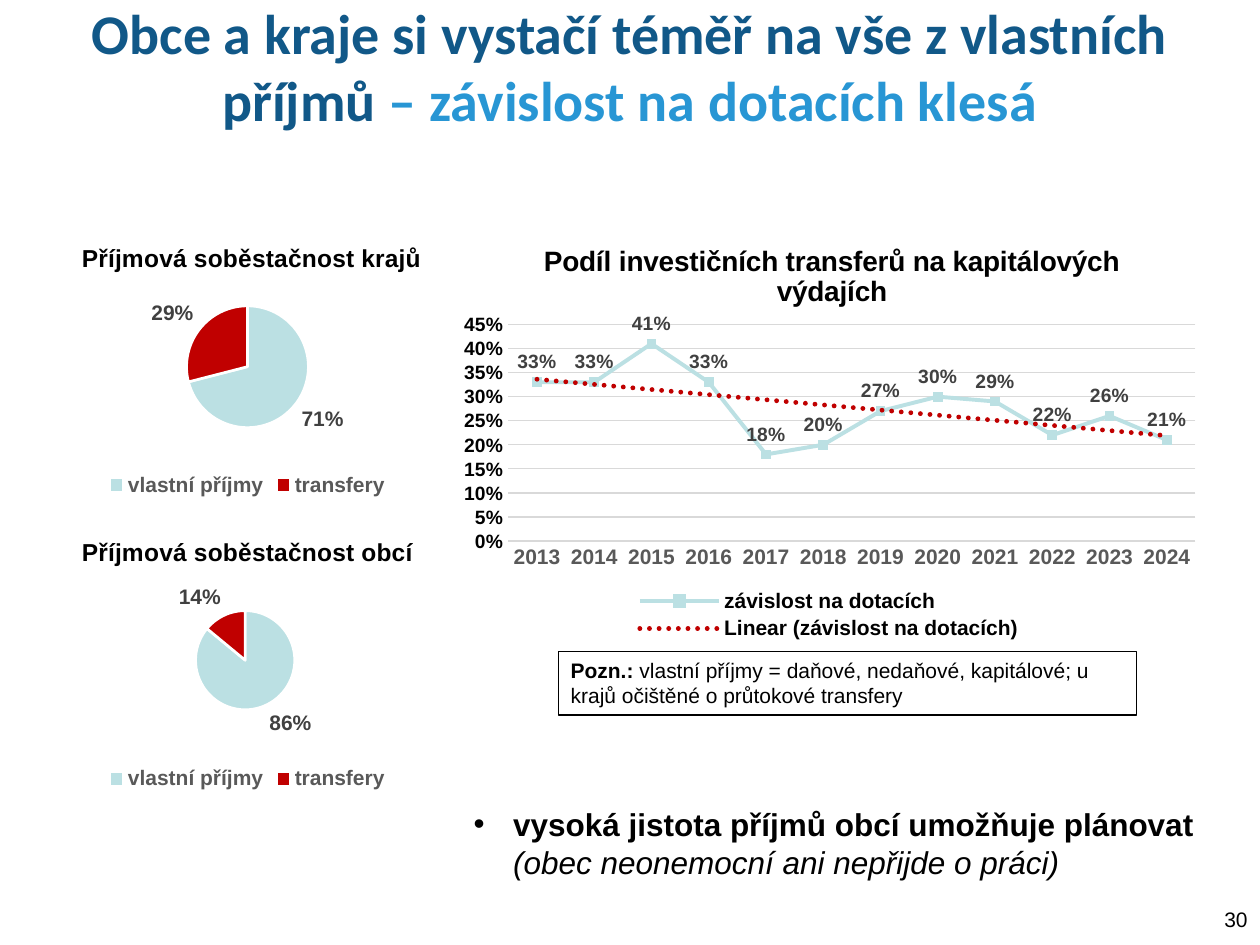
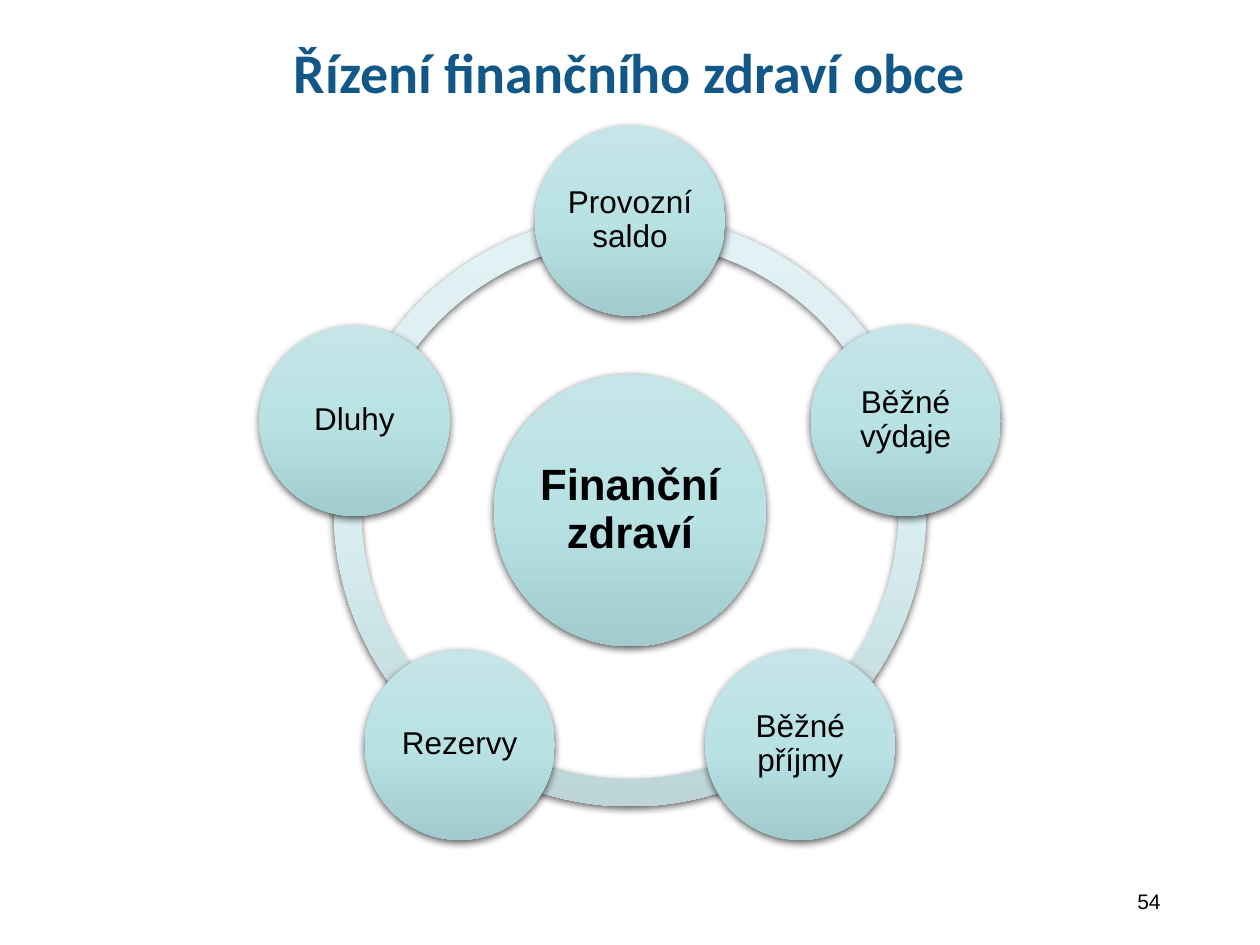
"""Build two slides on municipal income and financial health."""
from math import cos, radians, sin

from lxml.etree import SubElement
from pptx import Presentation
from pptx.chart.data import CategoryChartData
from pptx.dml.color import RGBColor
from pptx.enum.chart import XL_CHART_TYPE as ChartType
from pptx.enum.chart import XL_LABEL_POSITION as LabelPosition
from pptx.enum.chart import XL_LEGEND_POSITION as LegendPosition
from pptx.enum.chart import XL_MARKER_STYLE as MarkerStyle
from pptx.enum.chart import XL_TICK_MARK as TickMark
from pptx.enum.shapes import MSO_SHAPE as Shape
from pptx.enum.text import MSO_ANCHOR as Anchor
from pptx.enum.text import MSO_AUTO_SIZE as AutoSize
from pptx.enum.text import PP_ALIGN as Align
from pptx.oxml.ns import qn
from pptx.util import Pt

NAVY = RGBColor(0x11, 0x58, 0x88)
SKY = RGBColor(0x28, 0x96, 0xD4)
BLACK = RGBColor(0, 0, 0)
WHITE = RGBColor(0xFF, 0xFF, 0xFF)
AQUA = RGBColor(0xBB, 0xE0, 0xE3)
RED = RGBColor(0xC0, 0, 0)
LABEL_GREY = RGBColor(0x40, 0x40, 0x40)
AXIS_GREY = RGBColor(0x59, 0x59, 0x59)
GRID_GREY = RGBColor(0xD9, 0xD9, 0xD9)
RING_STOPS = ("E2F1F3", "D8EEF0", "BED5D7")
CIRCLE_STOPS = ("C5E5E8", "B9E2E5", "A1CBCE")


def style(font, size, color=BLACK, **extra):
    """Apply the format values to a font."""
    values = {"name": "Arial", "size": Pt(size), "bold": False, **extra}
    for name, value in values.items():
        setattr(font, name, value)
    font.color.rgb = color


def place(parent, after, **fractions):
    """Give a chart part a fixed place, in fractions of the chart."""
    old = parent.find(qn("c:layout"))
    if old is not None:
        parent.remove(old)
    previous = parent.find(qn(after))
    layout = parent.makeelement(qn("c:layout"))
    parent.insert(0 if previous is None else parent.index(previous) + 1, layout)
    manual = SubElement(layout, qn("c:manualLayout"))
    if parent.tag == qn("c:plotArea"):
        SubElement(manual, qn("c:layoutTarget"), val="inner")
    for side in "xy":
        SubElement(manual, qn(f"c:{side}Mode"), val="edge")
    for side, value in fractions.items():
        SubElement(manual, qn(f"c:{side}"), val=str(value))


prs = Presentation()
prs.slide_width, prs.slide_height = Pt(720), Pt(540)
income = prs.slides.add_slide(prs.slide_layouts[1])
health = prs.slides.add_slide(prs.slide_layouts[5])

headings = [
    (income, (41, 3.6, 638, 67.7), [
        ("Obce a kraje si vystačí téměř na vše z vlastních příjmů ", NAVY),
        ("– závislost na dotacích klesá", SKY)]),
    (health, (36, 15, 648, 51), [("Řízení finančního zdraví obce", NAVY)]),
]
for slide, box, parts in headings:
    title = slide.shapes.title
    title.left, title.top, title.width, title.height = map(Pt, box)
    title.text_frame.auto_size = AutoSize.NONE
    title.text_frame.vertical_anchor = Anchor.MIDDLE
    heading = title.text_frame.paragraphs[0]
    heading.alignment = Align.CENTER
    for text, color in parts:
        run = heading.add_run()
        run.text = text
        style(run.font, 32, color, name="Calibri", bold=True)

for slide, number, left, top in ((income, "30", 558, 511), (health, "54", 508.3, 500.4)):
    page = slide.shapes.add_textbox(Pt(left), Pt(top), Pt(162), Pt(28.8)).text_frame
    page.word_wrap = True
    page.vertical_anchor = Anchor.MIDDLE
    page.text = number
    page.paragraphs[0].alignment = Align.RIGHT
    style(page.paragraphs[0].runs[0].font, 12)

pies = [
    ("Příjmová soběstačnost krajů", 124.6, (0.71, 0.29),
     {"x": 0.37, "y": 0.31, "w": 0.26, "h": 0.43}),
    ("Příjmová soběstačnost obcí", 292.3, (0.86, 0.14),
     {"x": 0.39, "y": 0.35, "w": 0.21, "h": 0.35}),
]
charts = []
for name, top, shares, plot_box in pies:
    data = CategoryChartData(number_format="0%")
    data.categories = ["vlastní příjmy", "transfery"]
    data.add_series("Series 1", shares)
    pie = income.shapes.add_chart(
        ChartType.PIE, Pt(6.5), Pt(top), Pt(270), Pt(162), data).chart
    for index, color in enumerate((AQUA, RED)):
        slice_format = pie.series[0].points[index].format
        slice_format.fill.solid()
        slice_format.fill.fore_color.rgb = color
        slice_format.line.color.rgb = WHITE
        slice_format.line.width = Pt(1.5)
    charts.append((pie, name, 14, {"x": 0.14, "y": 0.07}, plot_box,
                   12, LabelPosition.OUTSIDE_END, AXIS_GREY))

data = CategoryChartData(number_format="0%")
data.categories = [str(year) for year in range(2013, 2025)]
data.add_series("závislost na dotacích", (
    0.33, 0.33, 0.41, 0.33, 0.18, 0.2, 0.27, 0.3, 0.29, 0.22, 0.26, 0.21))
transfers = income.shapes.add_chart(
    ChartType.LINE_MARKERS, Pt(255.6), Pt(121), Pt(436.3), Pt(247.7), data).chart
charts.append((transfers, "Podíl investičních transferů na kapitálových výdajích", 16,
               {"x": 0.12, "y": 0.06}, {"x": 0.08, "y": 0.26, "w": 0.9, "h": 0.5},
               11, LabelPosition.ABOVE, BLACK))

for chart, name, title_size, title_box, plot_box, label_size, position, legend_color in charts:
    style(chart.font, 10)
    chart.has_title = True
    chart.chart_title.include_in_layout = False
    chart.chart_title.text_frame.text = name
    style(chart.chart_title.text_frame.paragraphs[0].runs[0].font, title_size, bold=True)
    place(chart.chart_title._element, "c:tx", **title_box)
    place(chart._chartSpace.chart.plotArea, "c:tx", **plot_box)
    chart.has_legend = True
    chart.legend.position = LegendPosition.BOTTOM
    chart.legend.include_in_layout = False
    style(chart.legend.font, 12, legend_color, bold=True)
    plot = chart.plots[0]
    plot.vary_by_categories = chart is not transfers
    plot.has_data_labels = True
    labels = plot.data_labels
    labels.show_value = True
    labels.show_percentage = False
    labels.number_format = "0%"
    labels.number_format_is_linked = False
    labels.position = position
    style(labels.font, label_size, LABEL_GREY, bold=True)

place(transfers.legend._element, "c:legendPos", x=0.25, y=0.86, w=0.5, h=0.14)
dependence = transfers.series[0]
dependence.smooth = False
dependence.format.line.color.rgb = AQUA
dependence.format.line.width = Pt(2.25)
dependence.marker.style = MarkerStyle.SQUARE
dependence.marker.size = 5
dependence.marker.format.fill.solid()
dependence.marker.format.fill.fore_color.rgb = AQUA
dependence.marker.format.line.color.rgb = AQUA

trend = dependence._element.makeelement(qn("c:trendline"))
dependence._element.find(qn("c:cat")).addprevious(trend)
SubElement(trend, qn("c:name")).text = "Linear (závislost na dotacích)"
trend_line = SubElement(SubElement(trend, qn("c:spPr")), qn("a:ln"),
                        w=str(Pt(2.75)), cap="rnd")
SubElement(SubElement(trend_line, qn("a:solidFill")), qn("a:srgbClr"), val=str(RED))
SubElement(trend_line, qn("a:prstDash"), val="sysDot")
for option, value in (("trendlineType", "linear"), ("dispRSqr", "0"), ("dispEq", "0")):
    SubElement(trend, qn(f"c:{option}"), val=value)

years, percents = transfers.category_axis, transfers.value_axis
for axis, size, color in ((years, 12, AXIS_GREY), (percents, 11, BLACK)):
    axis.major_tick_mark = axis.minor_tick_mark = TickMark.NONE
    style(axis.tick_labels.font, size, color, bold=True)
percents.minimum_scale, percents.maximum_scale, percents.major_unit = 0, 0.45, 0.05
percents.tick_labels.number_format = "0%"
percents.tick_labels.number_format_is_linked = False
percents.format.line.fill.background()
for line in (years.format.line, percents.major_gridlines.format.line):
    line.color.rgb = GRID_GREY
    line.width = Pt(0.75)

note = income.shapes.add_shape(Shape.RECTANGLE, Pt(319), Pt(372.2), Pt(330.5), Pt(36.4))
note.shadow.inherit = False
note.fill.background()
note.line.color.rgb = BLACK
note.line.width = Pt(0.75)
note.text_frame.word_wrap = True
note.text_frame.vertical_anchor = Anchor.TOP
definition = note.text_frame.paragraphs[0]
definition.alignment = Align.LEFT
for text, bold in (("Pozn.: ", True), (
        "vlastní příjmy = daňové, nedaňové, kapitálové; u krajů očištěné o průtokové transfery",
        False)):
    run = definition.add_run()
    run.text = text
    style(run.font, 12, bold=bold)

certainty = income.placeholders[1]
certainty.left, certainty.top, certainty.width, certainty.height = map(
    Pt, (263.5, 456.5, 436.3, 51))
certainty.text_frame.auto_size = AutoSize.NONE
message = certainty.text_frame.paragraphs[0]
message.space_before = Pt(0)
indent = Pt(22.5)
message._p.get_or_add_pPr().set("marL", str(indent))
message._p.get_or_add_pPr().set("indent", str(-indent))
run = message.add_run()
run.text = "vysoká jistota příjmů obcí umožňuje plánovat"
style(run.font, 18, bold=True)
message.add_line_break()
SubElement(message._p.find(qn("a:br")), qn("a:rPr"), sz="1800")
run = message.add_run()
run.text = "(obec neonemocní ani nepřijde o práci)"
style(run.font, 18, italic=True)

center_x, center_y, orbit = 360, 291.6, 165.6
ring_size, hub_size, node_size = 338.4, 155.5, 108.7
factors = ["Provozní saldo", "Běžné výdaje", "Běžné příjmy", "Rezervy", "Dluhy"]
step = 360 / len(factors)

painted = []
for index in range(len(factors)):
    arc = health.shapes.add_shape(
        Shape.BLOCK_ARC, Pt(center_x - ring_size / 2), Pt(center_y - ring_size / 2),
        Pt(ring_size), Pt(ring_size))
    start = (270 + index * step) % 360
    end = (start + step) % 360
    arc.adjustments[0], arc.adjustments[1] = start * 0.6, end * 0.6
    arc.adjustments[2] = 0.046
    painted.append((arc, RING_STOPS))

circles = [("Finanční zdraví", center_x, center_y, hub_size, 25, True)]
for index, factor in enumerate(factors):
    angle = radians(index * step)
    circles.append((factor, center_x + orbit * sin(angle), center_y - orbit * cos(angle),
                    node_size, 18, False))
for text, x, y, size, font_size, bold in circles:
    circle = health.shapes.add_shape(
        Shape.OVAL, Pt(x - size / 2), Pt(y - size / 2), Pt(size), Pt(size))
    frame = circle.text_frame
    frame.word_wrap = True
    frame.vertical_anchor = Anchor.MIDDLE
    for side in ("left", "top", "right", "bottom"):
        setattr(frame, f"margin_{side}", Pt(2))
    frame.text = text
    frame.paragraphs[0].alignment = Align.CENTER
    frame.paragraphs[0].line_spacing = 0.9
    style(frame.paragraphs[0].runs[0].font, font_size, bold=bold)
    painted.append((circle, CIRCLE_STOPS))

for shape, stops in painted:
    shape.line.fill.background()
    shape.fill.gradient()
    shape.fill.gradient_angle = 270
    gradient = shape._element.spPr.find(".//" + qn("a:gsLst"))
    for old in list(gradient):
        gradient.remove(old)
    for position, color in zip((0, 50000, 100000), stops):
        stop = SubElement(gradient, qn("a:gs"), pos=str(position))
        SubElement(stop, qn("a:srgbClr"), val=color)
    shape.shadow.inherit = False
    shadow = SubElement(shape._element.spPr.find(qn("a:effectLst")), qn("a:outerShdw"),
                        blurRad=str(Pt(4.5)), dist=str(Pt(1.5)), dir="5400000", rotWithShape="0")
    shade = SubElement(shadow, qn("a:srgbClr"), val=str(BLACK))
    SubElement(shade, qn("a:alpha"), val="63000")

prs.save("out.pptx")
